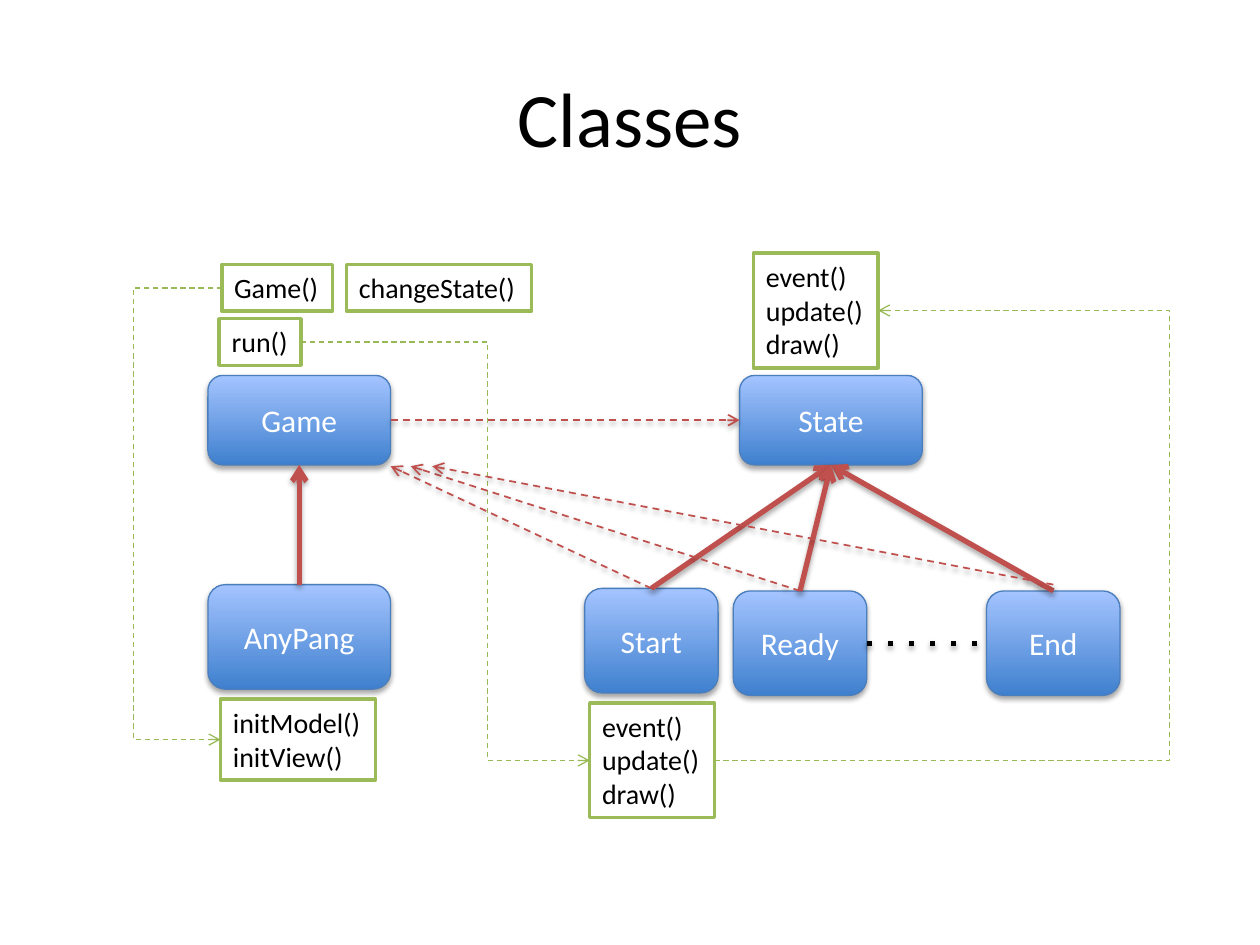
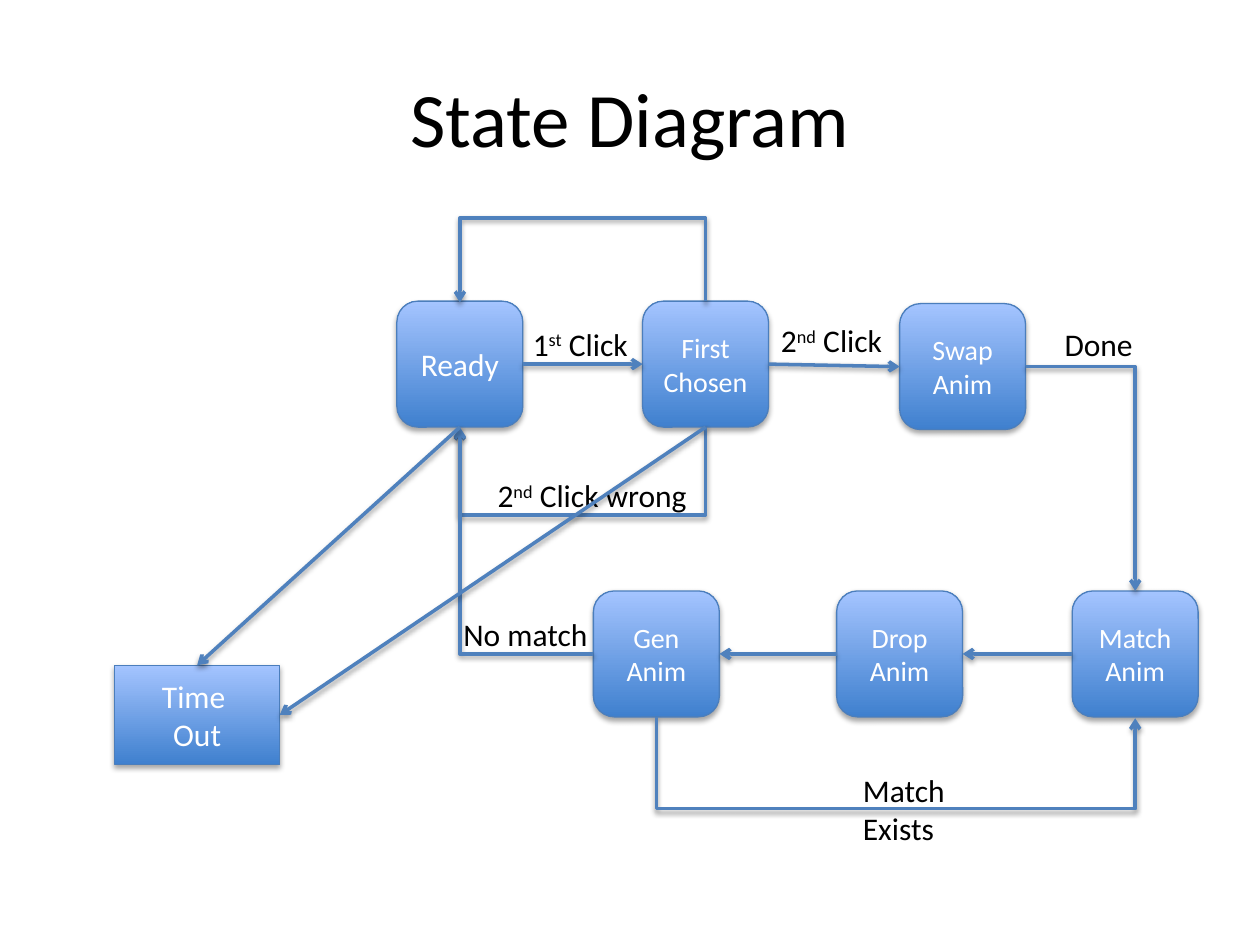
from dataclasses import dataclass
from typing import Any, NamedTuple, Union

from lxml import etree
from pptx import Presentation
from pptx import util as u
from pptx.dml import color
from pptx.enum import shapes, text
from pptx.oxml import ns

Inches = u.Inches
TOP, LEFT, BOTTOM, RIGHT = range(4)


@dataclass(frozen=True)
class Theme:
    font: str = "Calibri"
    black: str = "000000"
    white: str = "FFFFFF"
    node_bottom: str = "3F80CE"
    node_top: str = "A4C4FF"
    node_line: str = "4B7EBC"
    method_line: str = "9BBB59"
    call: str = "98B955"
    relation: str = "C0504D"
    flow: str = "4F81BD"
    title: int = 44
    body: int = 18
    small: int = 16


THEME = Theme()


class Node(NamedTuple):
    key: str
    lines: tuple[str, ...]
    x: float
    y: float
    w: float
    h: float
    size: int = THEME.body
    preset: Any = shapes.MSO_SHAPE.ROUNDED_RECTANGLE


class Methods(NamedTuple):
    key: str
    lines: tuple[str, ...]
    x: float
    y: float
    w: float


class Label(NamedTuple):
    lines: tuple[str, ...]
    x: float
    y: float
    w: float


class Port(NamedTuple):
    key: str
    side: int


class Spot(NamedTuple):
    x: float
    y: float


class Stroke(NamedTuple):
    color: str
    width: float
    dash: str = "solid"
    arrow: bool = True
    shadow: int = 0


class Link(NamedTuple):
    begin: Union[Port, Spot]
    end: Union[Port, Spot]
    stroke: Stroke
    turn: str = ""
    at: float = 0


INHERITS = Stroke(THEME.relation, 3, shadow=35)
USES = Stroke(THEME.relation, 1, "dash", shadow=38)
MORE = Stroke(THEME.black, 3, "dot", arrow=False, shadow=35)
CALLS = Stroke(THEME.call, 0.75, "dash")
FLOW = Stroke(THEME.flow, 2, shadow=38)


def rgb(value: str) -> color.RGBColor:
    return color.RGBColor.from_string(value)


def child(parent: Any, tag: str, **attrs: Any) -> Any:
    return etree.SubElement(parent, ns.qn(tag), {k: str(v) for k, v in attrs.items()})


def set_all(obj: Any, values: dict[str, Any]) -> None:
    for name, value in values.items():
        setattr(obj, name, value)


def add_shadow(sp: Any, alpha: int) -> None:
    effects = child(sp._element.spPr, "a:effectLst")
    if alpha:
        shadow = child(effects, "a:outerShdw", blurRad=u.Pt(3.1), dist=u.Pt(1.8 if alpha == 35 else 1.6),
                       dir=5400000, rotWithShape=0)
        child(child(shadow, "a:srgbClr", val=THEME.black), "a:alpha", val=alpha * 1000)


def write(sp: Any, lines: tuple[str, ...], size: int, ink: str, align: Any, frame: dict[str, Any]) -> None:
    tf = sp.text_frame
    set_all(tf, frame)
    for i, line in enumerate(lines):
        p = tf.paragraphs[0] if i == 0 else tf.add_paragraph()
        p.alignment = align
        for j, part in enumerate(line.split("^")):
            r = p.add_run()
            r.text = part
            set_all(r.font, {"name": THEME.font, "size": u.Pt(size)})
            r.font.color.rgb = rgb(ink)
            if j % 2:
                r._r.get_or_add_rPr().set("baseline", "30000")


CENTERED = {"word_wrap": True, "vertical_anchor": text.MSO_ANCHOR.MIDDLE}
GROWING = {"word_wrap": False, "auto_size": text.MSO_AUTO_SIZE.SHAPE_TO_FIT_TEXT,
           "vertical_anchor": text.MSO_ANCHOR.TOP}


def add_node(s: Any, node: Node) -> Any:
    sp = s.shapes.add_shape(node.preset, *map(Inches, (node.x, node.y, node.w, node.h)))
    sp.fill.gradient()
    sp.fill.gradient_angle = 90
    for stop, value in zip(sp.fill.gradient_stops, (THEME.node_bottom, THEME.node_top)):
        stop.color.rgb = rgb(value)
    sp.line.color.rgb = rgb(THEME.node_line)
    sp.line.width = u.Pt(0.75)
    add_shadow(sp, 35)
    write(sp, node.lines, node.size, THEME.white, text.PP_ALIGN.CENTER, CENTERED)
    return sp


def add_methods(s: Any, box: Methods) -> Any:
    height = 0.1 + 0.27 * len(box.lines)
    sp = s.shapes.add_shape(shapes.MSO_SHAPE.RECTANGLE, *map(Inches, (box.x, box.y, box.w, height)))
    sp.shadow.inherit = False
    sp.fill.solid()
    sp.fill.fore_color.rgb = rgb(THEME.white)
    sp.line.color.rgb = rgb(THEME.method_line)
    sp.line.width = u.Pt(2)
    write(sp, box.lines, THEME.small, THEME.black, text.PP_ALIGN.LEFT, GROWING)
    return sp


def add_label(s: Any, label: Label) -> None:
    height = 0.1 + 0.3 * len(label.lines)
    sp = s.shapes.add_textbox(*map(Inches, (label.x, label.y, label.w, height)))
    write(sp, label.lines, THEME.body, THEME.black, text.PP_ALIGN.LEFT, GROWING)


def locate(end: Union[Port, Spot], boxes: dict[str, Any]) -> tuple[int, int]:
    if isinstance(end, Spot):
        return Inches(end.x), Inches(end.y)
    sp = boxes[end.key]
    across = {LEFT: 0, RIGHT: 2}.get(end.side, 1)
    down = {TOP: 0, BOTTOM: 2}.get(end.side, 1)
    return sp.left + sp.width * across // 2, sp.top + sp.height * down // 2


def add_elbow(s: Any, link: Link, x1: int, y1: int, x2: int, y2: int) -> Any:
    kind = shapes.MSO_CONNECTOR.ELBOW
    if link.turn == "y":
        depth, span = Inches(0.01), abs(x2 - x1)
        left, top = (x1 + x2 - depth) // 2, y1 + (depth - span) // 2
        ys = (top + span, top) if x2 > x1 else (top, top + span)
        c = s.shapes.add_connector(kind, left, ys[0], left + depth, ys[1])
        c._element.spPr.xfrm.set("rot", "5400000")
        ratio = (Inches(link.at) - y1) / depth
    else:
        c = s.shapes.add_connector(kind, x1, y1, x2, y2)
        ratio = (Inches(link.at) - x1) / (x2 - x1)
    geometry = c._element.spPr.find(ns.qn("a:prstGeom"))
    if link.turn == "corner":
        geometry.set("prst", "bentConnector2")
    else:
        child(geometry.find(ns.qn("a:avLst")), "a:gd", name="adj1", fmla=f"val {round(ratio * 100000)}")
    return c


def add_link(s: Any, link: Link, boxes: dict[str, Any]) -> None:
    ends = (*locate(link.begin, boxes), *locate(link.end, boxes))
    if link.turn:
        c = add_elbow(s, link, *ends)
    else:
        c = s.shapes.add_connector(shapes.MSO_CONNECTOR.STRAIGHT, *ends)
        for end, join in ((link.begin, c.begin_connect), (link.end, c.end_connect)):
            if isinstance(end, Port):
                join(boxes[end.key], end.side)
    c.line.color.rgb = rgb(link.stroke.color)
    c.line.width = u.Pt(link.stroke.width)
    ln = c.line._get_or_add_ln()
    child(ln, "a:prstDash", val=link.stroke.dash)
    if link.stroke.arrow:
        child(ln, "a:tailEnd", type="arrow")
    add_shadow(c, link.stroke.shadow)


def add_diagram(prs: Any, title: str, nodes: list[Node], methods: list[Methods],
                labels: list[Label], links: list[Link]) -> None:
    s = prs.slides.add_slide(prs.slide_layouts[5])
    sp = s.shapes.title
    set_all(sp, dict(zip(("left", "top", "width", "height"), map(Inches, (0.5, 0.3, 9, 1.25)))))
    write(sp, (title,), THEME.title, THEME.black, text.PP_ALIGN.CENTER, CENTERED)
    boxes = {node.key: add_node(s, node) for node in nodes}
    boxes.update({box.key: add_methods(s, box) for box in methods})
    for label in labels:
        add_label(s, label)
    for link in links:
        add_link(s, link, boxes)


def add_classes(prs: Any) -> None:
    handlers = ("event()", "update()", "draw()")
    nodes = [
        Node("Game", ("Game",), 1.65, 2.98, 1.45, 0.71),
        Node("AnyPang", ("AnyPang",), 1.65, 4.64, 1.45, 0.83),
        Node("State", ("State",), 5.87, 2.98, 1.45, 0.71),
        Node("Start", ("Start",), 4.64, 4.67, 1.06, 0.83),
        Node("End", ("End",), 7.83, 4.69, 1.06, 0.83),
        Node("Ready", ("Ready",), 5.82, 4.69, 1.06, 0.83),
    ]
    methods = [
        Methods("constructor", ("Game()",), 1.76, 2.1, 0.88),
        Methods("run", ("run()",), 1.74, 2.53, 0.65),
        Methods("init", ("initModel()", "initView()"), 1.75, 5.55, 1.23),
        Methods("state handlers", handlers, 5.98, 2.01, 0.99),
        Methods("start handlers", handlers, 4.68, 5.58, 0.99),
        Methods("change", ("changeState()",), 2.75, 2.1, 1.47),
    ]
    links = [Link(Port(sub, TOP), Port(base, BOTTOM), INHERITS) for sub, base in
             (("AnyPang", "Game"), ("Start", "State"), ("End", "State"), ("Ready", "State"))]
    links += [
        Link(Port("Game", RIGHT), Port("State", LEFT), USES),
        Link(Port("Ready", RIGHT), Port("End", LEFT), MORE),
        Link(Port("constructor", LEFT), Port("init", LEFT), CALLS, "x", 1.05),
        Link(Port("run", RIGHT), Port("start handlers", LEFT), CALLS, "x", 3.87),
        Link(Port("Start", TOP), Spot(3.1, 3.7), USES),
        Link(Port("Ready", TOP), Spot(3.26, 3.7), USES),
        Link(Spot(8.36, 4.64), Spot(3.43, 3.7), USES),
        Link(Port("start handlers", RIGHT), Port("state handlers", RIGHT), CALLS, "x", 9.28),
    ]
    add_diagram(prs, "Classes", nodes, methods, [], links)


def add_states(prs: Any) -> None:
    nodes = [
        Node("Ready", ("Ready",), 3.15, 2.39, 1, 1),
        Node("Time Out", ("Time ", "Out"), 0.91, 5.28, 1.31, 0.79, preset=shapes.MSO_SHAPE.RECTANGLE),
    ]
    nodes += [Node(words[0], words, x, y, 1, 1, THEME.small) for words, x, y in (
        (("First", "Chosen"), 5.1, 2.39), (("Swap", "Anim"), 7.14, 2.41), (("Match", "Anim"), 8.51, 4.69),
        (("Drop", "Anim"), 6.64, 4.69), (("Gen", "Anim"), 4.71, 4.69))]
    labels = [
        Label(("1^st^ Click",), 4.13, 2.53, 0.98),
        Label(("2^nd^ Click",), 6.1, 2.5, 1.04),
        Label(("2^nd^ Click wrong",), 3.85, 3.73, 1.75),
        Label(("Done",), 8.35, 2.53, 0.75),
        Label(("Match", "Exists"), 6.75, 6.07, 0.86),
        Label(("No match",), 3.58, 4.83, 1.2),
    ]
    links = [
        Link(Port("Ready", RIGHT), Port("First", LEFT), FLOW),
        Link(Port("First", RIGHT), Port("Swap", LEFT), FLOW),
        Link(Port("First", BOTTOM), Port("Ready", BOTTOM), FLOW, "y", 4.1),
        Link(Port("Swap", RIGHT), Port("Match", TOP), FLOW, "corner"),
        Link(Port("Match", LEFT), Port("Drop", RIGHT), FLOW),
        Link(Port("Drop", LEFT), Port("Gen", RIGHT), FLOW),
        Link(Port("Gen", BOTTOM), Port("Match", BOTTOM), FLOW, "y", 6.43),
        Link(Port("Gen", LEFT), Port("Ready", BOTTOM), FLOW, "corner"),
        Link(Port("Ready", BOTTOM), Port("Time Out", TOP), FLOW),
        Link(Port("First", BOTTOM), Port("Time Out", RIGHT), FLOW),
        Link(Port("First", TOP), Port("Ready", TOP), FLOW, "y", 1.72),
    ]
    add_diagram(prs, "State Diagram", nodes, [], labels, links)


def main() -> None:
    prs = Presentation()
    prs.slide_width, prs.slide_height = Inches(10), Inches(7.5)
    add_classes(prs)
    add_states(prs)
    prs.save("out.pptx")


if __name__ == "__main__":
    main()
